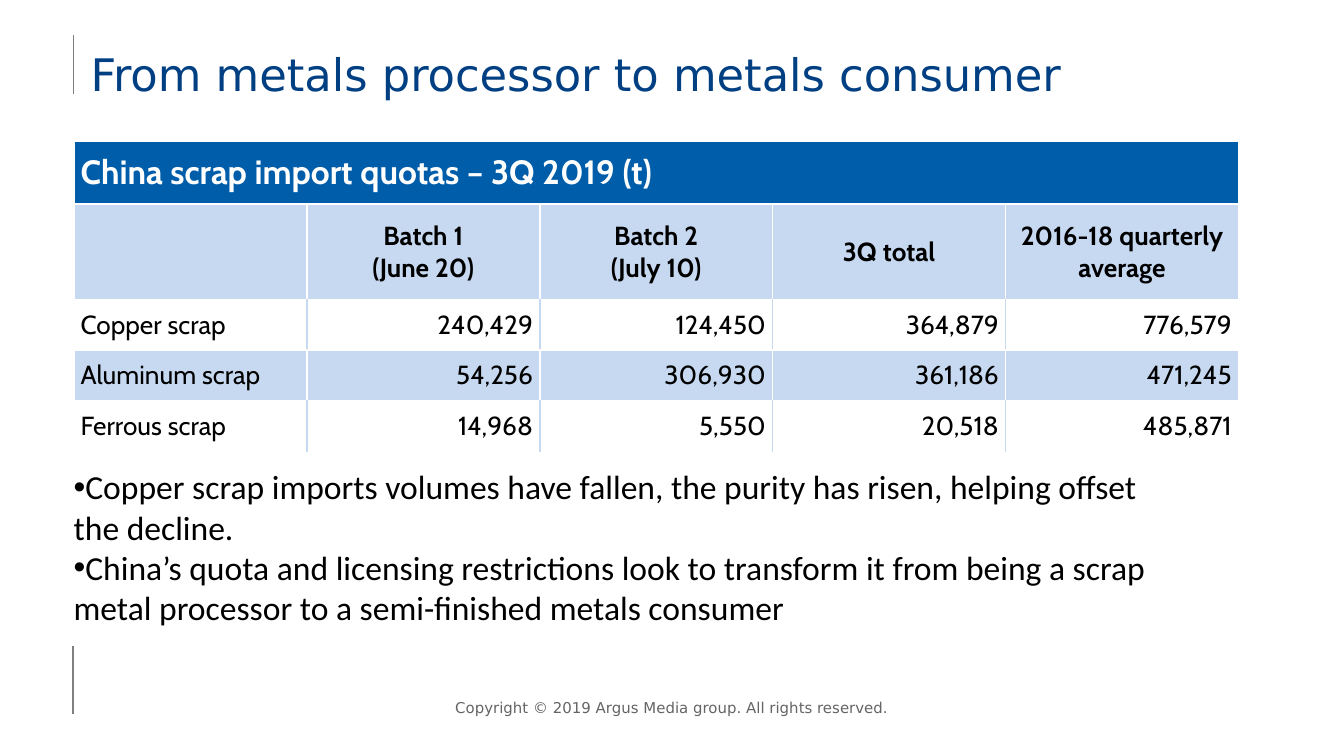
from lxml.etree import SubElement
from pptx import Presentation
from pptx.dml.color import RGBColor
from pptx.enum.shapes import MSO_CONNECTOR
from pptx.enum.text import MSO_ANCHOR, PP_ALIGN
from pptx.oxml.ns import qn
from pptx.util import Pt

WHITE = RGBColor(0xFF, 0xFF, 0xFF)
BLACK = RGBColor(0, 0, 0)
NAVY = RGBColor(0x00, 0x3F, 0x82)
BLUE = RGBColor(0x00, 0x5D, 0xAA)
PALE_BLUE = RGBColor(0xC6, 0xD9, 0xF1)
RULE_GRAY = RGBColor(0x80, 0x80, 0x80)
FOOTER_GRAY = RGBColor(0x63, 0x64, 0x63)

TITLE = "From metals processor to metals consumer"
COPYRIGHT = "Copyright © 2019 Argus Media group. All rights reserved."
QUOTAS = [
    ["China scrap import quotas – 3Q 2019 (t)", "", "", "", ""],
    ["", "Batch 1\n(June 20)", "Batch 2\n(July 10)", "3Q total", "2016-18 quarterly average"],
    ["Copper scrap", "240,429", "124,450", "364,879", "776,579"],
    ["Aluminum scrap", "54,256", "306,930", "361,186", "471,245"],
    ["Ferrous scrap", "14,968", "5,550", "20,518", "485,871"],
]
ROW_HEIGHTS = [33.8, 51, 27.2, 27.2, 27.2]
ROW_FILLS = [BLUE, PALE_BLUE, None, PALE_BLUE, None]
COLUMN_WIDTH = 124.8
TAKEAWAYS = [
    "Copper scrap imports volumes have fallen, the purity has risen, helping offset the decline.",
    "China’s quota and licensing restrictions look to transform it from being a scrap "
    "metal processor to a semi-finished metals consumer",
]


def style_font(font, name, size, color, bold=False):
    font.color.rgb = color
    for attribute, value in {"name": name, "size": Pt(size), "bold": bold}.items():
        setattr(font, attribute, value)


def add_rule(slide, x, top, bottom):
    rule = slide.shapes.add_connector(MSO_CONNECTOR.STRAIGHT, Pt(x), Pt(bottom), Pt(x), Pt(top))
    rule.line.color.rgb = RULE_GRAY
    rule.line.width = Pt(0.75)
    SubElement(rule.element.spPr, qn("a:effectLst"))


def add_bullet(paragraph):
    properties = paragraph._p.get_or_add_pPr()
    properties.set("marL", "0")
    properties.set("indent", "0")
    SubElement(properties, qn("a:buFont"), typeface="Arial")
    SubElement(properties, qn("a:buChar"), char="•")


def add_text(slide, box, lines, font, bulleted=False, align=PP_ALIGN.LEFT, **frame_format):
    frame = slide.shapes.add_textbox(*map(Pt, box)).text_frame
    for attribute, value in {"word_wrap": True, **frame_format}.items():
        setattr(frame, attribute, value)
    frame.text = "\n".join(lines)
    for paragraph in frame.paragraphs:
        if bulleted:
            add_bullet(paragraph)
        paragraph.alignment = align
        style_font(paragraph.font, *font)


def set_borders(cell, colors):
    properties = cell._tc.get_or_add_tcPr()
    for side, color in zip("LRTB", colors):
        border = SubElement(properties, qn(f"a:ln{side}"), w=str(Pt(1)))
        SubElement(SubElement(border, qn("a:solidFill")), qn("a:srgbClr"), val=str(color))


def format_cell(cell, row, column):
    fill = ROW_FILLS[row]
    left = WHITE if fill or column == 0 else PALE_BLUE
    right = WHITE if fill or column == len(QUOTAS[row]) - 1 else PALE_BLUE
    set_borders(cell, (left, right, WHITE, WHITE))
    if fill:
        cell.fill.solid()
        cell.fill.fore_color.rgb = fill
    else:
        cell.fill.background()
    margins = {"margin_left": Pt(3.6), "margin_right": Pt(3.6), "margin_top": 0, "margin_bottom": 0}
    for attribute, value in {**margins, "vertical_anchor": MSO_ANCHOR.MIDDLE}.items():
        setattr(cell, attribute, value)
    if row == 0 or column == 0:
        align = PP_ALIGN.LEFT
    else:
        align = PP_ALIGN.CENTER if row == 1 else PP_ALIGN.RIGHT
    size, color = (18, WHITE) if row == 0 else (14, BLACK)
    cell.text = QUOTAS[row][column]
    for paragraph in cell.text_frame.paragraphs:
        paragraph.alignment = align
        style_font(paragraph.font, "Cabin", size, color, row < 2)


def add_quota_table(slide, left, top):
    column_count = len(QUOTAS[0])
    size = (COLUMN_WIDTH * column_count, sum(ROW_HEIGHTS))
    table = slide.shapes.add_table(
        len(QUOTAS), column_count, Pt(left), Pt(top), *map(Pt, size)
    ).table
    table.first_row = table.horz_banding = False
    for column in table.columns:
        column.width = Pt(COLUMN_WIDTH)
    for row, height in enumerate(ROW_HEIGHTS):
        table.rows[row].height = Pt(height)
        for column in range(column_count):
            format_cell(table.cell(row, column), row, column)
    table.cell(0, 0).merge(table.cell(0, column_count - 1))


def main():
    presentation = Presentation()
    presentation.slide_width = Pt(720)
    presentation.slide_height = Pt(405)
    slide = presentation.slides.add_slide(presentation.slide_layouts[6])

    add_rule(slide, 39.5, 19, 50.5)
    add_rule(slide, 39.2, 346.3, 382.3)
    add_text(slide, (48.5, 18, 630, 36), [TITLE], ("DejaVu Sans", 24, NAVY),
             vertical_anchor=MSO_ANCHOR.BOTTOM,
             margin_left=0, margin_right=0, margin_top=0, margin_bottom=0)
    add_text(slide, (235.4, 364.5, 249.2, 28.8), [COPYRIGHT], ("DejaVu Sans", 8, FOOTER_GRAY),
             align=PP_ALIGN.CENTER, vertical_anchor=MSO_ANCHOR.MIDDLE)
    add_quota_table(slide, 39.6, 75.6)
    add_text(slide, (32.4, 246.3, 612, 94.5), TAKEAWAYS, ("Calibri", 18, BLACK), bulleted=True)

    presentation.save("out.pptx")


if __name__ == "__main__":
    main()
